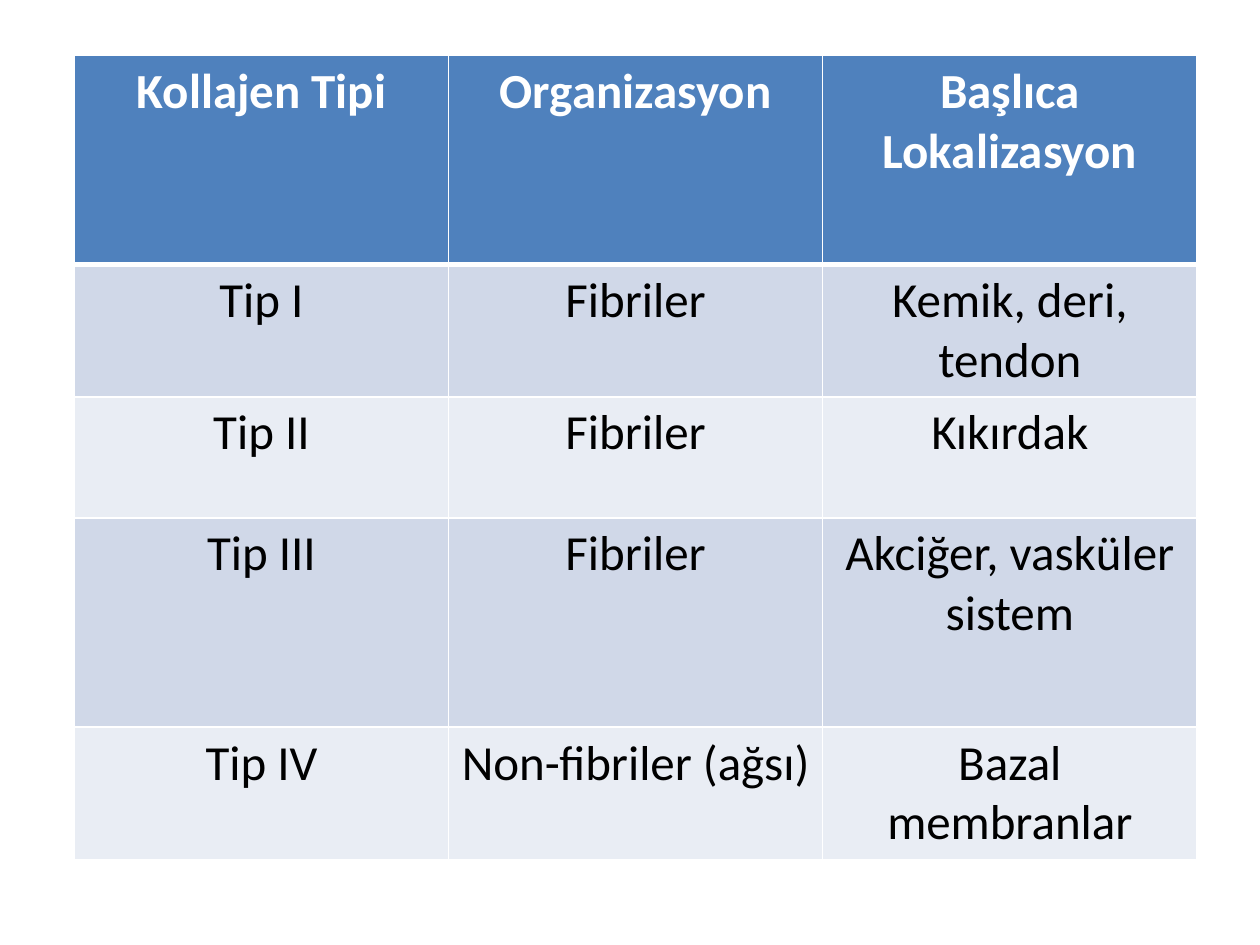
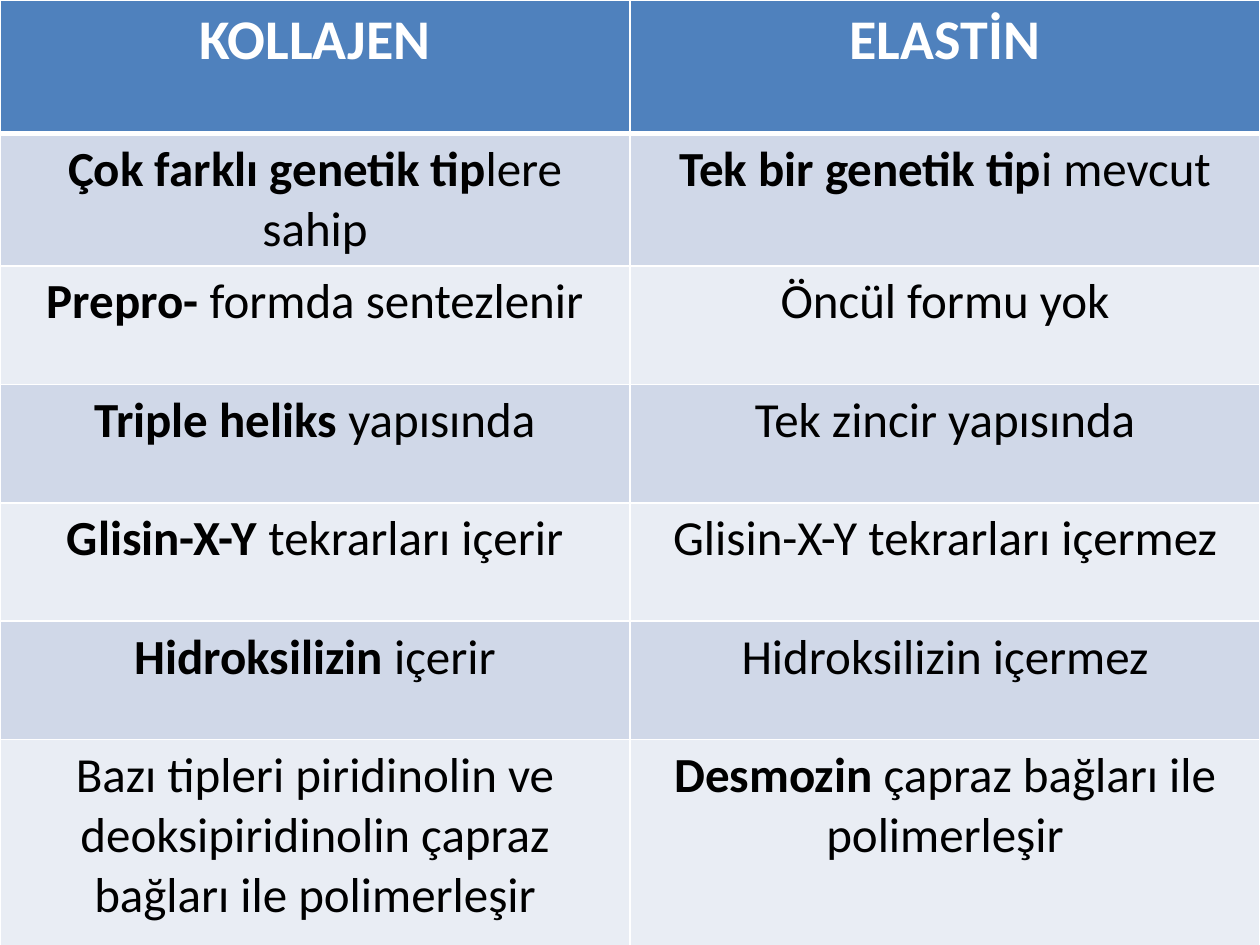
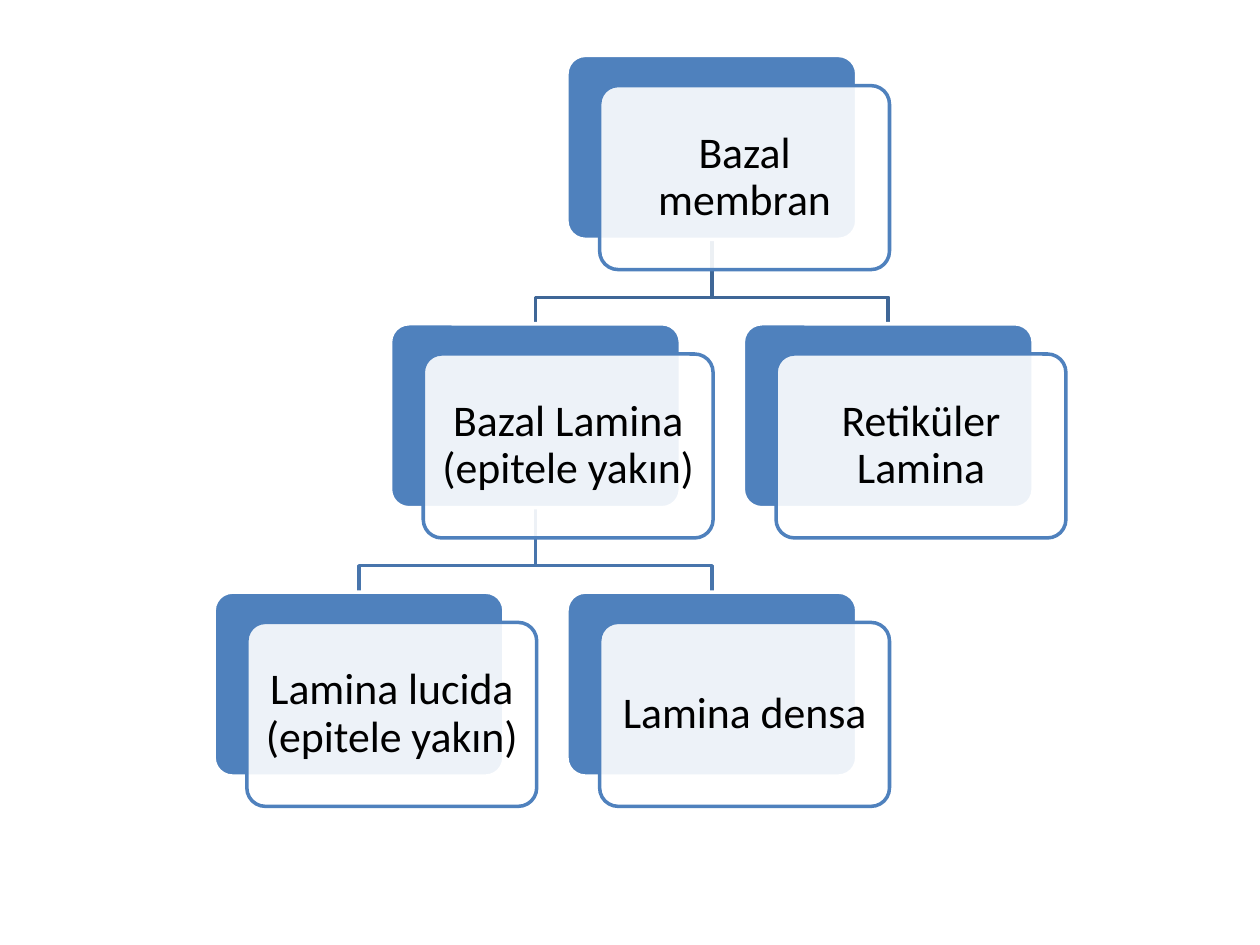
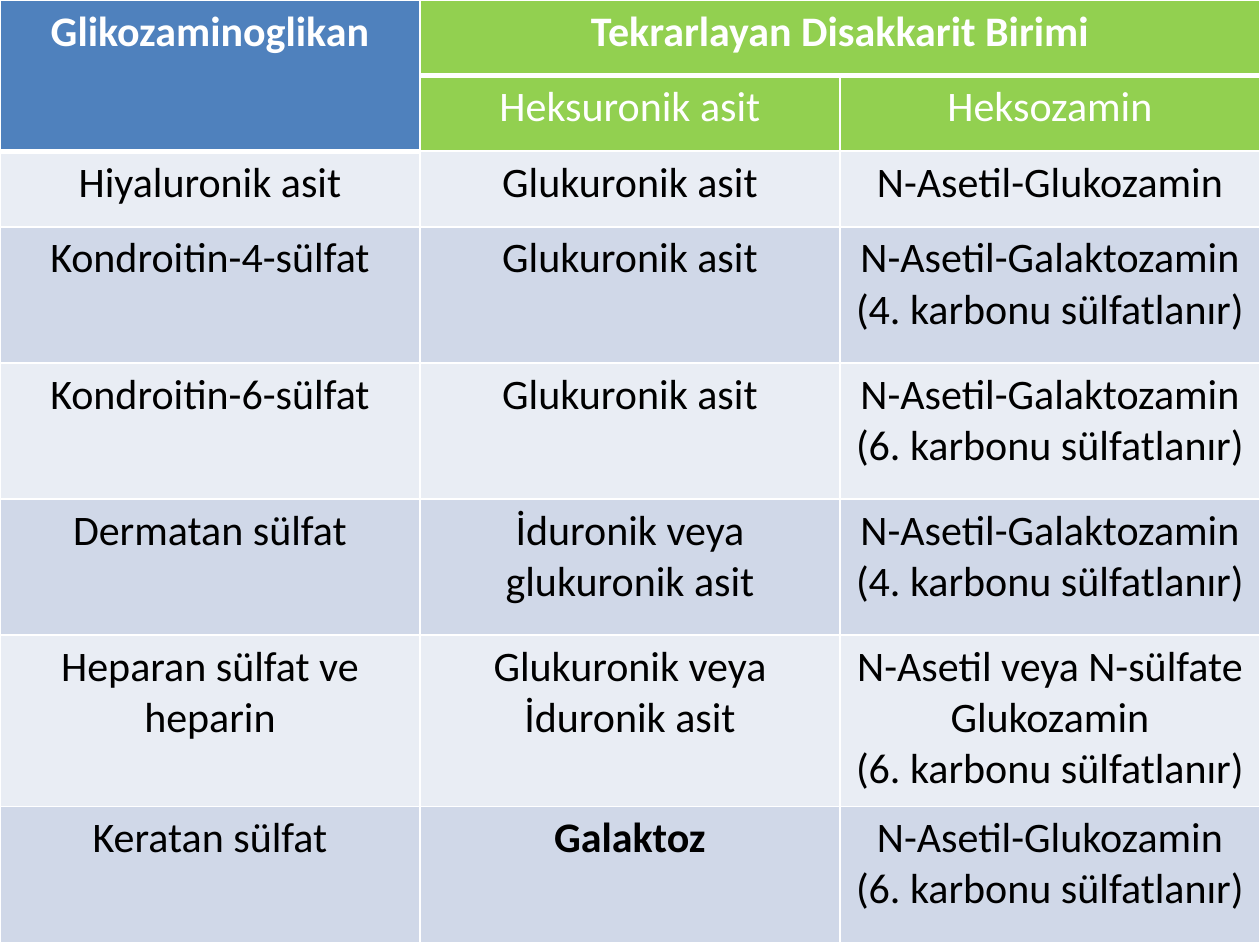
from dataclasses import dataclass

from lxml import etree
from pptx import Presentation
from pptx import util as u
from pptx.dml import color
from pptx.enum import shapes, text
from pptx.oxml import ns


# Theme: colours and type sizes
@dataclass(frozen=True)
class Theme:
    font: str = "Calibri"
    white: str = "FFFFFF"
    black: str = "000000"
    blue: str = "4F81BD"
    green: str = "92D050"
    bands: tuple = ("E9EDF4", "D0D8E8")
    branches: tuple = ("3F6797", "4875AC")
    heading: int = 32
    body: int = 28
    node: int = 25
    dense: int = 24
    thin: int = 1
    thick: int = 3
    outline: int = 2


def rgb(value):
    return color.RGBColor.from_string(value)


def apply(target, values):
    for name, value in values.items():
        setattr(target, name, value)


class Deck:
    """Holds the theme and the current slide."""

    def __init__(self, theme):
        self.theme = theme
        self.prs = Presentation()
        apply(self.prs, {"slide_width": u.Inches(10), "slide_height": u.Inches(7.5)})
        self.slide = None

    def new_slide(self):
        self.slide = self.prs.slides.add_slide(self.prs.slide_layouts[6])

    # Text: a line break starts a paragraph, asterisks enclose bold words
    def set_text(self, frame, content, size, ink, bold=False, spacing=None):
        for index, line in enumerate(content.split("\n")):
            paragraph = frame.add_paragraph() if index else frame.paragraphs[0]
            apply(paragraph, {"alignment": text.PP_ALIGN.CENTER, "line_spacing": spacing})
            for part, words in enumerate(line.split("*")):
                if words:
                    run = paragraph.add_run()
                    run.text = words
                    apply(run.font, {"name": self.theme.font, "size": u.Pt(size),
                                     "bold": bold or part % 2 == 1})
                    run.font.color.rgb = rgb(ink)

    def paint(self, shape, fill, line):
        shape.shadow.inherit = False
        if fill:
            shape.fill.solid()
            shape.fill.fore_color.rgb = rgb(fill)
        else:
            shape.fill.background()
        shape.line.color.rgb = rgb(line)
        shape.line.width = u.Pt(self.theme.outline)

    # Cell borders: the thick rule lies where a column's heading ends
    def borders(self, cell, top, bottom):
        properties = cell._tc.get_or_add_tcPr()
        widths = {"lnL": self.theme.thin, "lnR": self.theme.thin, "lnT": top, "lnB": bottom}
        for index, (side, width) in enumerate(widths.items()):
            edge = etree.Element(ns.qn(f"a:{side}"), w=str(int(u.Pt(width))))
            fill = etree.SubElement(edge, ns.qn("a:solidFill"))
            etree.SubElement(fill, ns.qn("a:srgbClr"), val=self.theme.white)
            properties.insert(index, edge)

    def table(self, left, top, widths, heights, rows, size, head_size=None,
              head_rows=1, head_fills=None, rule_rows=None, merges=()):
        theme = self.theme
        head_fills = head_fills or [theme.blue] * len(widths)
        rule_rows = rule_rows or [1] * len(widths)
        grid = self.slide.shapes.add_table(
            len(rows), len(widths), u.Inches(left), u.Inches(top),
            u.Inches(sum(widths)), u.Inches(sum(heights))).table
        apply(grid, {"first_row": False, "horz_banding": False})
        for column, width in zip(grid.columns, widths):
            column.width = u.Inches(width)
        for r, (height, row) in enumerate(zip(heights, rows)):
            grid.rows[r].height = u.Inches(height)
            is_head = r < head_rows
            for c, content in enumerate(row):
                cell = grid.cell(r, c)
                cell.fill.solid()
                cell.fill.fore_color.rgb = rgb(head_fills[c] if is_head else theme.bands[r % 2])
                self.borders(cell,
                             theme.thick if r == rule_rows[c] else theme.thin,
                             theme.thick if r < rule_rows[c] else theme.thin)
                self.set_text(cell.text_frame, content,
                              head_size if is_head and head_size else size,
                              theme.white if is_head else theme.black, bold=r == 0)
        for first, last in merges:
            grid.cell(*first).merge(grid.cell(*last))

    def card(self, left, top, width, height, fill, line):
        card = self.slide.shapes.add_shape(
            shapes.MSO_SHAPE.ROUNDED_RECTANGLE,
            *map(u.Inches, (left, top, width, height)))
        card.adjustments[0] = 0.1
        self.paint(card, fill, line)
        return card

    def node(self, left, top, width, height, label):
        theme = self.theme
        self.card(left, top, width, height, theme.blue, theme.white)
        front = self.card(left + 0.26, top + 0.24, width, height, theme.white, theme.blue)
        tint = front._element.spPr.find(ns.qn("a:solidFill"))[0]
        etree.SubElement(tint, ns.qn("a:alpha"), val="90000")
        inset = u.Inches(0.06)
        apply(front.text_frame, {
            "word_wrap": True, "vertical_anchor": text.MSO_ANCHOR.MIDDLE,
            "margin_left": inset, "margin_right": inset,
            "margin_top": inset, "margin_bottom": inset})
        self.set_text(front.text_frame, label, theme.node, theme.black, spacing=0.9)

    def branch(self, start, end, line):
        bend = start[1] + 0.46
        points = [start, (start[0], bend), (end[0], bend), end]
        points = [(u.Inches(x), u.Inches(y)) for x, y in points]
        builder = self.slide.shapes.build_freeform(*points[0])
        builder.add_line_segments(points[1:], close=False)
        self.paint(builder.convert_to_shape(), None, line)


# Slide 1: collagen types
def collagen_types(deck):
    deck.new_slide()
    deck.table(0.59, 0.44, [2.97] * 3, [1.66, 0.96, 0.96, 1.66, 0.96], [
        ("Kollajen Tipi", "Organizasyon", "Başlıca Lokalizasyon"),
        ("Tip I", "Fibriler", "Kemik, deri, tendon"),
        ("Tip II", "Fibriler", "Kıkırdak"),
        ("Tip III", "Fibriler", "Akciğer, vasküler sistem"),
        ("Tip IV", "Non-fibriler (ağsı)", "Bazal membranlar"),
    ], deck.theme.body)


# Slide 2: collagen and elastin compared
def collagen_and_elastin(deck):
    deck.new_slide()
    deck.table(0, 0, [5, 5], [1.06] + [0.94] * 5 + [1.72], [
        ("KOLLAJEN", "ELASTİN"),
        ("*Çok farklı genetik tip*lere sahip", "*Tek bir genetik tip*i mevcut"),
        ("*Prepro-* formda sentezlenir", "Öncül formu yok"),
        ("*Triple heliks *yapısında", "Tek zincir yapısında"),
        ("*Glisin-X-Y* tekrarları içerir", "Glisin-X-Y tekrarları içermez"),
        ("*Hidroksilizin* içerir", "Hidroksilizin içermez"),
        ("Bazı tipleri piridinolin ve deoksipiridinolin çapraz bağları ile polimerleşir",
         "*Desmozin* çapraz bağları ile polimerleşir"),
    ], deck.theme.body, head_size=deck.theme.heading)


# Slide 3: layers of the basement membrane
def membrane_tree(deck):
    deck.new_slide()
    width, height = 2.3, 1.46
    # Label: (half-column, level, parent)
    layers = {
        "Bazal membran": (2, 0, None),
        "Bazal Lamina (epitele yakın)": (1, 1, "Bazal membran"),
        "Lamina lucida (epitele yakın)": (0, 2, "Bazal Lamina (epitele yakın)"),
        "Lamina densa": (2, 2, "Bazal Lamina (epitele yakın)"),
        "Retiküler Lamina": (3, 1, "Bazal membran"),
    }
    corners = {label: (1.7 + 1.4 * column, 0.44 + 2.13 * level)
               for label, (column, level, _) in layers.items()}
    for label, (_, level, parent) in layers.items():
        if parent:
            (x1, y1), (x2, y2) = corners[parent], corners[label]
            deck.branch((x1 + width / 2, y1 + height), (x2 + width / 2, y2),
                        deck.theme.branches[level - 1])
    for label, corner in corners.items():
        deck.node(*corner, width, height, label)


# Slide 4: glycosaminoglycans and their repeating units
def glycosaminoglycans(deck):
    deck.new_slide()
    theme = deck.theme
    glucuronic = "Glukuronik asit"
    galactosamine = "N-Asetil-Galaktozamin"
    at_4, at_6 = (f"\n({carbon}. karbonu sülfatlanır)" for carbon in (4, 6))
    deck.table(0, 0, [10 / 3] * 3, [0.6] * 3 + [1.08] * 3 + [1.36, 1.08], [
        ("Glikozaminoglikan", "Tekrarlayan Disakkarit Birimi", ""),
        ("", "Heksuronik asit", "Heksozamin"),
        ("Hiyaluronik asit", glucuronic, "N-Asetil-Glukozamin"),
        ("Kondroitin-4-sülfat", glucuronic, galactosamine + at_4),
        ("Kondroitin-6-sülfat", glucuronic, galactosamine + at_6),
        ("Dermatan sülfat", "İduronik veya glukuronik asit", galactosamine + at_4),
        ("Heparan sülfat ve heparin", "Glukuronik veya İduronik asit",
         "N-Asetil veya N-sülfate Glukozamin" + at_6),
        ("Keratan sülfat", "*Galaktoz*", "N-Asetil-Glukozamin" + at_6),
    ], theme.dense, head_rows=2, head_fills=[theme.blue, theme.green, theme.green],
        rule_rows=[2, 1, 1], merges=[((0, 0), (1, 0)), ((0, 1), (0, 2))])


def main():
    deck = Deck(Theme())
    for build in (collagen_types, collagen_and_elastin, membrane_tree, glycosaminoglycans):
        build(deck)
    deck.prs.save("out.pptx")


if __name__ == "__main__":
    main()
